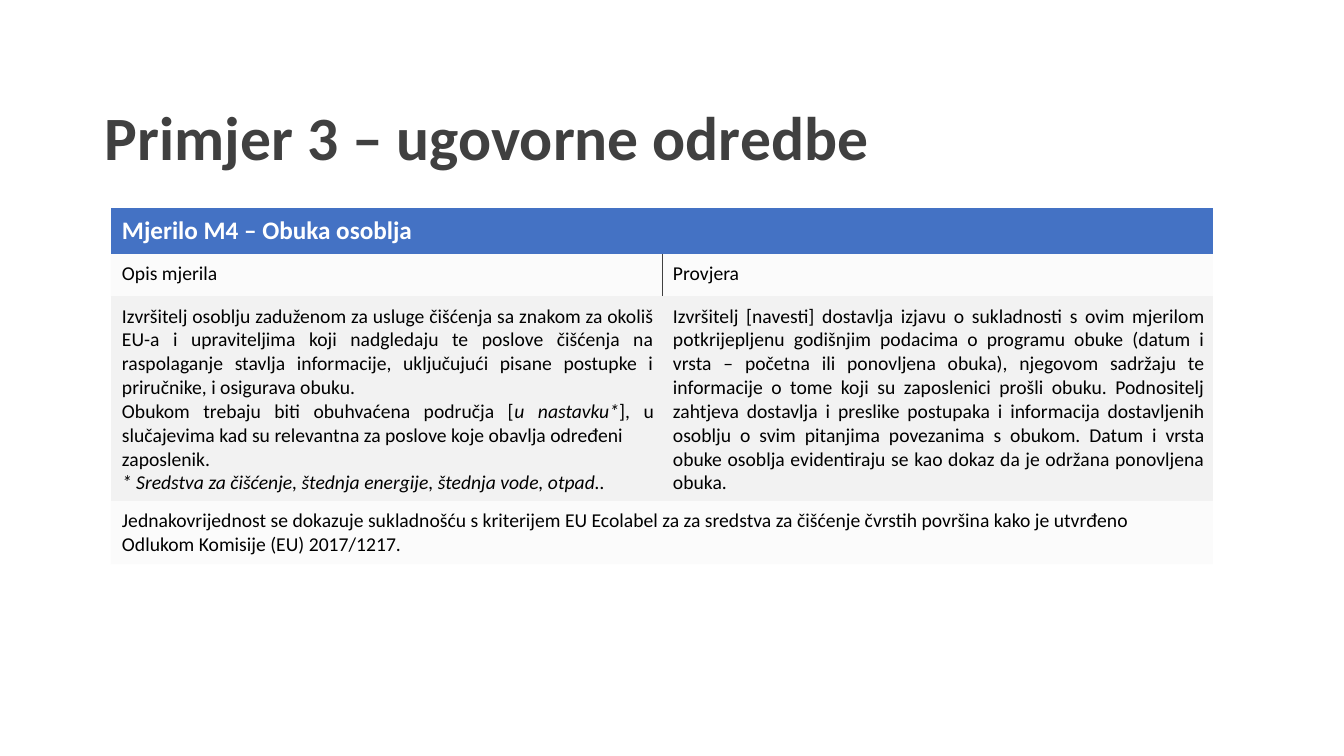
from dataclasses import dataclass

from lxml.etree import SubElement
from pptx import Presentation
from pptx.dml.color import RGBColor
from pptx.enum.text import MSO_ANCHOR as Anchor, PP_ALIGN as Align
from pptx.oxml import parse_xml
from pptx.oxml.ns import nsdecls, qn
from pptx.util import Inches, Pt


@dataclass(frozen=True)
class Theme:
    font: str = "Calibri"
    title_size: int = 44
    header_size: int = 18
    body_size: int = 14
    dark: str = "404040"
    text: str = "000000"
    white: str = "FFFFFF"
    blue: str = "4472C4"
    grey: str = "F2F2F2"
    pale_alpha: int = 30
    plain_table: str = "{2D5ABB26-0587-4C30-8999-92F81FD0307C}"


THEME = Theme()

# Each paragraph is a list of (text, italic) runs
DESCRIPTION = [
    [("Izvršitelj osoblju zaduženom za usluge čišćenja sa znakom za okoliš EU-a i "
      "upraviteljima koji nadgledaju te poslove čišćenja na raspolaganje stavlja "
      "informacije, uključujući pisane postupke i priručnike, i osigurava obuku.", False)],
    [("Obukom trebaju biti obuhvaćena područja [", False),
     ("u nastavku*", True),
     ("], u slučajevima kad su relevantna za poslove koje obavlja određeni", False)],
    [("zaposlenik.", False)],
    [("* Sredstva za čišćenje, štednja energije, štednja vode, otpad..", True)],
]
VERIFICATION = (
    "Izvršitelj [navesti] dostavlja izjavu o sukladnosti s ovim mjerilom potkrijepljenu "
    "godišnjim podacima o programu obuke (datum i vrsta – početna ili ponovljena obuka), "
    "njegovom sadržaju te informacije o tome koji su zaposlenici prošli obuku. Podnositelj "
    "zahtjeva dostavlja i preslike postupaka i informacija dostavljenih osoblju o svim "
    "pitanjima povezanima s obukom. Datum i vrsta obuke osoblja evidentiraju se kao dokaz "
    "da je održana ponovljena obuka."
)
EQUIVALENCE = (
    "Jednakovrijednost se dokazuje sukladnošću s kriterijem EU Ecolabel za za sredstva za "
    "čišćenje čvrstih površina kako je utvrđeno Odlukom Komisije (EU) 2017/1217."
)


def plain(text):
    return [[(text, False)]]


def write(frame, paragraphs, size, color, bold=False, align=Align.LEFT):
    for index, runs in enumerate(paragraphs):
        para = frame.paragraphs[0] if index == 0 else frame.add_paragraph()
        para.alignment = align
        para.font.name = THEME.font
        para.font.size = Pt(size)
        para.font.bold = bold
        para.font.color.rgb = RGBColor.from_string(color)
        for text, italic in runs:
            run = para.add_run()
            run.text = text
            if italic:
                run.font.italic = True


def fill_cell(cell, color, alpha=100):
    cell.fill.solid()
    cell.fill.fore_color.rgb = RGBColor.from_string(color)
    if alpha < 100:
        shade = cell._tc.tcPr.find(".//" + qn("a:srgbClr"))
        SubElement(shade, qn("a:alpha"), val=str(alpha * 1000))


def add_border(cell, side):
    line = parse_xml(
        f'<a:ln{side} {nsdecls("a")} w="{Pt(0.5)}"><a:solidFill>'
        f'<a:srgbClr val="{THEME.dark}"/></a:solidFill></a:ln{side}>')
    cell._tc.get_or_add_tcPr().insert(0, line)


def add_title(page, left, top, width, height):
    box = page.shapes.add_textbox(Inches(left), Inches(top), Inches(width), Inches(height))
    frame = box.text_frame
    frame.word_wrap = True
    frame.vertical_anchor = Anchor.MIDDLE
    write(frame, plain("Primjer 3 – ugovorne odredbe"), THEME.title_size, THEME.dark, bold=True)
    frame.paragraphs[0].line_spacing = 0.9


def add_criterion_table(page, left, top, width, heights):
    holder = page.shapes.add_table(len(heights), 2, Inches(left), Inches(top),
                                   Inches(width), Inches(sum(heights)))
    table = holder.table
    table.first_row = table.horz_banding = False
    table._tbl.tblPr.find(qn("a:tableStyleId")).text = THEME.plain_table
    for row, height in zip(table.rows, heights):
        row.height = Inches(height)

    # Full-width rows
    for index in (0, len(heights) - 1):
        table.cell(index, 0).merge(table.cell(index, 1))

    # Text of each cell, with its alignment and fill opacity
    body = [
        (1, 0, plain("Opis mjerila"), Align.LEFT, THEME.pale_alpha),
        (1, 1, plain("Provjera"), Align.LEFT, THEME.pale_alpha),
        (2, 0, DESCRIPTION, Align.JUSTIFY, 100),
        (2, 1, plain(VERIFICATION), Align.JUSTIFY, 100),
        (3, 0, plain(EQUIVALENCE), Align.LEFT, THEME.pale_alpha),
    ]
    for row, column, paragraphs, align, alpha in body:
        cell = table.cell(row, column)
        write(cell.text_frame, paragraphs, THEME.body_size, THEME.text, align=align)
        fill_cell(cell, THEME.grey, alpha)

    # Header row
    header = table.cell(0, 0)
    header.vertical_anchor = Anchor.MIDDLE
    write(header.text_frame, plain("Mjerilo M4 – Obuka osoblja"),
          THEME.header_size, THEME.white, bold=True)
    fill_cell(header, THEME.blue)

    for cell in table.iter_cells():
        cell.margin_left = Inches(0.11)
        cell.margin_right = cell.margin_top = cell.margin_bottom = Inches(0.08)

    # Divider between the two column headings
    add_border(table.cell(1, 0), "R")
    add_border(table.cell(1, 1), "L")


def main():
    deck = Presentation()
    deck.slide_width, deck.slide_height = Inches(13.33), Inches(7.5)
    page = deck.slides.add_slide(deck.slide_layouts[6])
    add_title(page, 0.94, 0.85, 11.25, 1.09)
    add_criterion_table(page, 1.1, 2.06, 10.93, [0.42, 0.42, 1.88, 0.63])
    deck.save("out.pptx")


if __name__ == "__main__":
    main()
